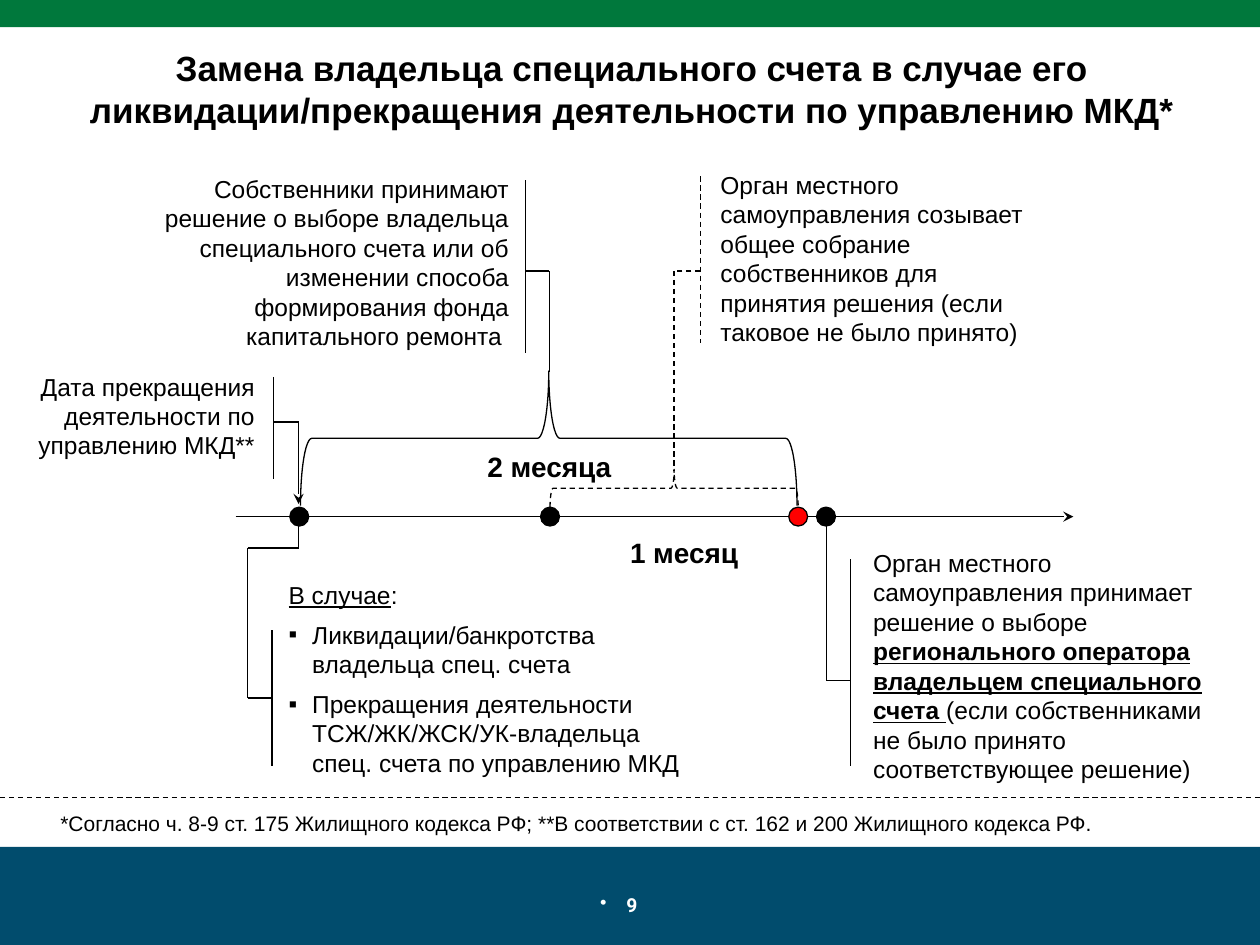
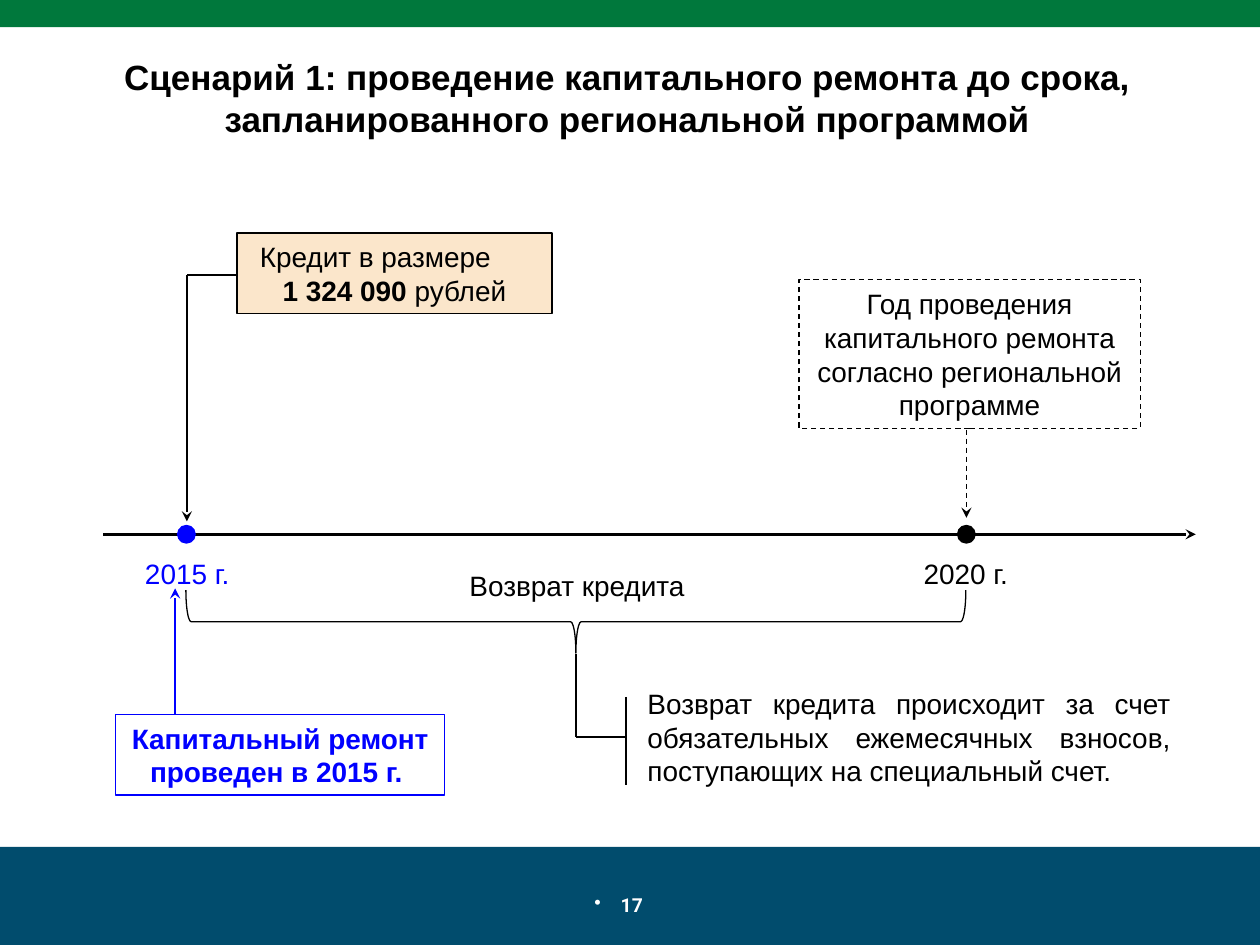
from pptx import Presentation
from pptx.dml.color import RGBColor
from pptx.enum.dml import MSO_LINE
from pptx.enum.shapes import MSO_CONNECTOR, MSO_SHAPE
from pptx.enum.text import MSO_ANCHOR, MSO_AUTO_SIZE, PP_ALIGN
from pptx.oxml.ns import qn
from pptx.util import Pt
from lxml import etree

STRAIGHT = MSO_CONNECTOR.STRAIGHT
DASH = MSO_LINE.DASH
RECT, OVAL = MSO_SHAPE.RECTANGLE, MSO_SHAPE.OVAL
BRACE_UP, BRACE_DOWN = MSO_SHAPE.LEFT_BRACE, MSO_SHAPE.RIGHT_BRACE
LEFT, CENTER, RIGHT = PP_ALIGN.LEFT, PP_ALIGN.CENTER, PP_ALIGN.RIGHT
JUSTIFY = PP_ALIGN.JUSTIFY
TOP, NO_FIT = MSO_ANCHOR.TOP, MSO_AUTO_SIZE.NONE

COLORS = {
    "ink": "000000", "paper": "FFFFFF", "top": "00783C", "bottom": "014C6D",
    "alert": "FF0000", "accent": "0000FF", "loan": "FBE6CB",
}
PAGE_W, PAGE_H = 720, 540
TITLE_ONLY, TITLE_AND_BODY = 5, 1
DOT = 10.8
TITLE = {"size": Pt(20), "bold": True}
NOTE = {"size": Pt(14)}
LABEL = {"size": Pt(16)}
STRONG = {**LABEL, "bold": True}


def color(name):
    return RGBColor.from_string(COLORS[name])


def points(*lengths):
    return [Pt(round(length, 2)) for length in lengths]


def write(para, spans, align=LEFT, ink="ink", font="Arial"):
    """Fill a paragraph with (text, font format) pairs."""
    para.alignment = align
    for text, fmt in spans:
        span = para.add_run()
        span.text = text
        span.font.color.rgb = color(ink)
        for name, value in {"name": font, **fmt}.items():
            setattr(span.font, name, value)


def set_bullet(para, char, indent):
    props = para._p.get_or_add_pPr()
    props.set("marL", str(Pt(indent)))
    props.set("indent", str(-Pt(indent)))
    etree.SubElement(props, qn("a:buChar")).set("char", char)


def place(shape, box):
    """Move a placeholder and give it the common text frame settings."""
    shape.left, shape.top, shape.width, shape.height = points(*box)
    frame = shape.text_frame
    settings = {"word_wrap": True, "auto_size": NO_FIT, "vertical_anchor": TOP}
    for name, value in settings.items():
        setattr(frame, name, value)
    return frame


def add_text(page, box, spans, align=LEFT, **style):
    shape = page.shapes.add_textbox(*points(*box))
    frame = place(shape, box)
    write(frame.paragraphs[0], spans, align, **style)
    return frame


def add_shape(page, kind, box, fill=None, line=None, dash=None):
    shape = page.shapes.add_shape(kind, *points(*box))
    shape.shadow.inherit = False
    if fill:
        shape.fill.solid()
        shape.fill.fore_color.rgb = color(fill)
    else:
        shape.fill.background()
    if line:
        shape.line.color.rgb = color(line)
        shape.line.width = Pt(0.75)
        shape.line.dash_style = dash
    else:
        shape.line.fill.background()
    return shape


def add_line(page, start, end, ink="ink", width=0.75, dash=None, arrow=False):
    line = page.shapes.add_connector(STRAIGHT, *points(*start, *end))
    line.line.color.rgb = color(ink)
    line.line.width = Pt(width)
    line.line.dash_style = dash
    props = line.element.spPr
    if arrow:
        tail = etree.SubElement(props.find(qn("a:ln")), qn("a:tailEnd"))
        tail.set("type", "stealth")
    etree.SubElement(props, qn("a:effectLst"))


def add_route(page, start, steps, arrow=False, **style):
    """Draw joined lines from start, one for each (dx, dy) step."""
    x, y = start
    for number, (dx, dy) in enumerate(steps, 1):
        end = (x + dx, y + dy)
        add_line(page, (x, y), end, arrow=arrow and number == len(steps), **style)
        x, y = end


def add_bracket(page, box, bar, join, steps, arrow=False, **style):
    """Draw a bar beside a text box and a route that leaves it.

    bar is (dx, top, bottom) and join is dy, all from the box's corner.
    """
    left, top = box[:2]
    x = left + bar[0]
    add_line(page, (x, top + bar[1]), (x, top + bar[2]), **style)
    add_route(page, (x, top + join), steps, arrow, **style)


def add_brace(page, kind, box, dash=None):
    """Draw a horizontal brace that fills the box as seen."""
    left, top, width, height = box
    shift = (width - height) / 2
    frame = (left + shift, top - shift, height, width)
    add_shape(page, kind, frame, line="ink", dash=dash).rotation = 90


def add_timeline(page, start, length, dots, width, outline=None):
    """Draw the time arrow with dots given as (distance, colour)."""
    x, y = start
    add_line(page, start, (x + length, y), width=width, arrow=True)
    for distance, fill in dots:
        corner = (x + distance - DOT / 2, y - DOT / 2)
        add_shape(page, OVAL, (*corner, DOT, DOT), fill, outline)


def start_page(deck, layout, title, title_box, number):
    page = deck.slides.add_slide(deck.slide_layouts[layout])
    add_shape(page, RECT, (0, 484, PAGE_W, 56), "bottom")
    add_shape(page, RECT, (0, 0, PAGE_W, 15.6), "top")
    frame = place(page.shapes.title, title_box)
    write(frame.paragraphs[0], [(title, TITLE)], CENTER)
    number_font = {"size": Pt(11), "bold": True}
    frame = add_text(page, (286, 507, 148, 22), [(number, number_font)],
                     CENTER, ink="paper", font="Roboto")
    frame.margin_right = Pt(20)
    set_bullet(frame.paragraphs[0], "•", 15)
    return page


def add_cases(page, box):
    frame = place(page.placeholders[1], box)
    heading = frame.paragraphs[0]
    write(heading, [("В случае", {**NOTE, "underline": True}), (":", NOTE)])
    cases = [
        "Ликвидации/банкротства владельца спец. счета",
        "Прекращения деятельности ТСЖ/ЖК/ЖСК/УК-владельца "
        "спец. счета по управлению МКД",
    ]
    for case in cases:
        write(frame.add_paragraph(), [(case, NOTE)])
    for para in frame.paragraphs:
        para.space_before, para.space_after = Pt(0), Pt(6)
    for para in frame.paragraphs[1:]:
        set_bullet(para, "▪", 13.5)
    props = heading._p.get_or_add_pPr()
    props.set("marL", "0")
    props.set("indent", "0")
    etree.SubElement(props, qn("a:buNone"))
    add_bracket(page, box, (-2.2, 32.4, 110.2), 71.3,
                [(-14, 0), (0, -85.7), (29.2, 0), (0, -13)])


def add_footnote(page, box):
    left, top, width, height = box
    add_line(page, (0, top - 3.6), (PAGE_W, top - 3.6), dash=DASH)
    text = ("*Согласно ч. 8-9 ст. 175 Жилищного кодекса РФ; "
            "**В соответствии с ст. 162 и 200 Жилищного кодекса РФ.")
    add_text(page, box, [(text, {"size": Pt(12)})], JUSTIFY)


def build_owner_change(deck):
    page = start_page(
        deck, TITLE_AND_BODY,
        "Замена владельца специального счета в случае его "
        "ликвидации/прекращения деятельности по управлению МКД*",
        (38.9, 23, 644.4, 55.4), "9")
    add_timeline(page, (134.6, 295.2), 478.8,
                 [(36.4, "ink"), (179.7, "ink"), (321.5, "alert"), (337.4, "ink")],
                 1, "ink")
    add_brace(page, BRACE_UP, (171.7, 212, 283.7, 77))
    add_brace(page, BRACE_UP, (314.3, 268.2, 141.8, 21.6), DASH)
    add_text(page, (267.1, 253.4, 93.6, 26.6), [("2 месяца", STRONG)], CENTER)
    add_text(page, (343.4, 302.4, 95, 26.6), [("1 месяц", STRONG)], CENTER)

    bold = {**NOTE, "bold": True, "underline": True}
    owners = "Собственники принимают решение о выборе владельца специального " \
        "счета или об изменении способа формирования фонда капитального ремонта "
    meeting = "Орган местного самоуправления созывает общее собрание " \
        "собственников для принятия решения (если таковое не было принято)"
    decision = [
        ("Орган местного самоуправления принимает решение о выборе ", NOTE),
        ("регионального оператора владельцем специального счета ", bold),
        ("(если собственниками не было принято соответствующее решение)", NOTE),
    ]
    ending = "Дата прекращения деятельности по управлению МКД**"
    callouts = [
        ((80.6, 95.8, 217.4, 108.7), [(owners, NOTE)], RIGHT,
         (219.6, 7.2, 105.8), 59, [(13.7, 0), (0, 57.6)], {}),
        ((13, 208.8, 139.7, 58.3), [(ending, NOTE)], RIGHT,
         (143.2, 6.5, 64.8), 32.4, [(14.4, 0), (0, 46.8)], {"arrow": True}),
        ((404.6, 93.6, 191.5, 108.7), [(meeting, NOTE)], LEFT,
         (-4.3, 7.2, 102.2), 61.2, [(-15.1, 0), (0, 113.8)], {"dash": DASH}),
        ((491.8, 309.6, 214.6, 143.3), decision, LEFT,
         (-5.8, 10.1, 128.2), 79.2, [(-13.7, 0), (0, -88.6)], {}),
    ]
    for box, spans, align, bar, join, steps, style in callouts:
        add_text(page, box, spans, align)
        add_bracket(page, box, bar, join, steps, **style)
    add_cases(page, (157.7, 327.6, 247, 121))
    add_footnote(page, (27.4, 459.4, 663.8, 21.6))


def add_loan(page, box):
    left, top, width, height = box
    frame = add_shape(page, RECT, box, "loan", "ink").text_frame
    frame.word_wrap = True
    caption = frame.paragraphs[0]
    write(caption, [("Кредит в размере", LABEL)])
    caption._p.get_or_add_pPr().set("marL", str(Pt(6)))
    write(frame.add_paragraph(),
          [("1 324 090 ", STRONG), ("рублей", LABEL)], CENTER)
    add_route(page, (left, top + 23.8), [(-28.6, 0), (0, 141)], True, width=1)


def add_milestone(page, box, text, fmt, ink, dash, drop, **arrow):
    """Draw a framed text and its arrow; drop is (dx, dy, length)."""
    left, top = box[:2]
    frame = add_shape(page, RECT, box, line=ink, dash=dash).text_frame
    frame.word_wrap = True
    write(frame.paragraphs[0], [(text, fmt)], CENTER, ink)
    dx, dy, length = drop
    add_route(page, (left + dx, top + dy), [(0, length)], True,
              ink=ink, dash=dash, **arrow)


def add_repayment(page, box):
    text = ("Возврат кредита происходит за счет обязательных ежемесячных "
            "взносов, поступающих на специальный счет.")
    add_text(page, box, [(text, LABEL)], JUSTIFY)
    add_bracket(page, box, (-5, 9.4, 59.8), 32.4, [(-28.8, 0), (0, -47.5)], width=1)


def build_scenario(deck):
    page = start_page(
        deck, TITLE_ONLY,
        "Сценарий 1: проведение капитального ремонта до срока, "
        "запланированного региональной программой",
        (33.8, 28.1, 649.4, 55.4), "17")
    add_timeline(page, (59, 305.3), 624.3, [(47.5, "accent"), (493.2, "ink")], 1.5)
    years = [("2015 г.", 67, "accent"), ("2020 г.", 511.9, "ink")]
    for year, left, ink in years:
        add_text(page, (left, 314.6, 79.9, 26.6), [(year, LABEL)], CENTER, ink=ink)
    add_brace(page, BRACE_DOWN, (106.2, 337.3, 445.7, 36))
    add_text(page, (237.6, 321.1, 184.3, 26.6), [("Возврат кредита", LABEL)], CENTER)
    add_milestone(page, (456.5, 159.8, 195.1, 85),
                  "Год проведения капитального ремонта согласно "
                  "региональной программе",
                  LABEL, "ink", DASH, (95.8, 85.7, 50.4))
    add_milestone(page, (66.2, 408.2, 187.9, 46.1),
                  "Капитальный ремонт проведен в 2015 г. ",
                  STRONG, "accent", None, (33.9, 0, -72), width=1)
    add_loan(page, (135.4, 133.2, 180, 46.1))
    add_repayment(page, (362.9, 388.8, 313.2, 65.5))


def main():
    deck = Presentation()
    deck.slide_width, deck.slide_height = Pt(PAGE_W), Pt(PAGE_H)
    build_owner_change(deck)
    build_scenario(deck)
    deck.save("out.pptx")


if __name__ == "__main__":
    main()
